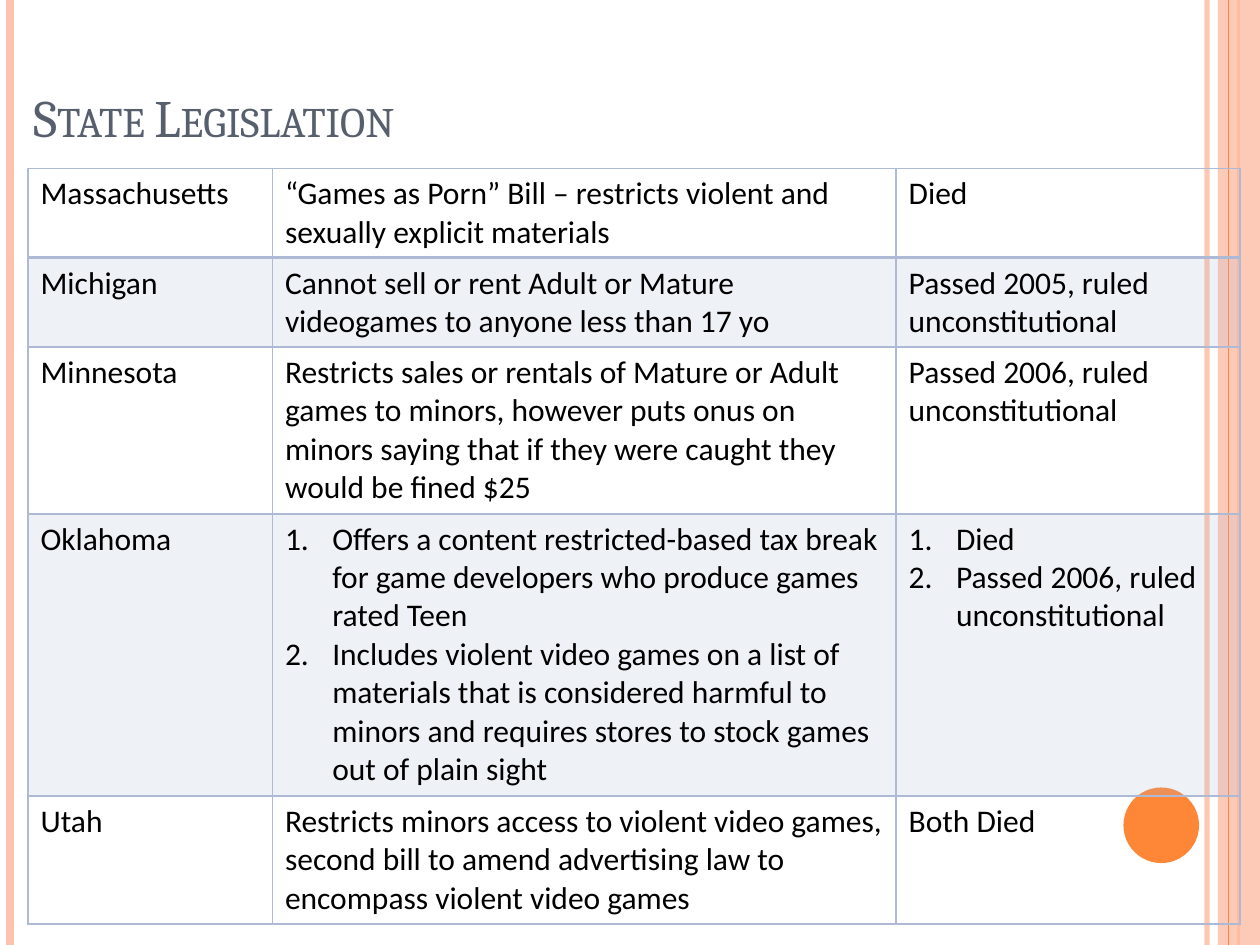
from lxml import etree
from pptx import Presentation
from pptx.dml.color import RGBColor
from pptx.enum.shapes import MSO_CONNECTOR, MSO_SHAPE
from pptx.enum.text import MSO_ANCHOR
from pptx.oxml.ns import qn
from pptx.util import Pt

STRAIGHT = MSO_CONNECTOR.STRAIGHT
RECTANGLE = MSO_SHAPE.RECTANGLE
OVAL = MSO_SHAPE.OVAL
BOTTOM = MSO_ANCHOR.BOTTOM

ORANGE = RGBColor(0xFE, 0x86, 0x37)
PEACH = RGBColor(0xFE, 0xC3, 0xAE)
SLATE = RGBColor(0x57, 0x5F, 0x6D)
BLUE = RGBColor(0xAE, 0xBA, 0xD5)
BLACK = RGBColor(0, 0, 0)

WIDTH, HEIGHT = 720, 540
TITLE_FORMAT = {"name": "Cambria", "size": Pt(30), "bold": False}
CELL_FORMAT = {"name": "Calibri", "size": Pt(18), "bold": False}
LIST_INDENT = Pt(27)

STRIPES = [(689.8, PEACH, 3, 93), (5.9, PEACH, 4.5, 100), (707.8, ORANGE, 1.5, 100)]
COLUMN_WIDTHS = [139.7, 356.4, 196.5]
ROW_HEIGHTS = [51.2, 51, 95.2, 161.2, 73.2]
LEGISLATION = [
    ("Massachusetts",
     "“Games as Porn” Bill – restricts violent and sexually explicit materials",
     "Died"),
    ("Michigan",
     "Cannot sell or rent Adult or Mature videogames to anyone less than 17 yo",
     "Passed 2005, ruled unconstitutional"),
    ("Minnesota",
     "Restricts sales or rentals of Mature or Adult games to minors, however puts "
     "onus on minors saying that if they were caught they would be fined $25",
     "Passed 2006, ruled unconstitutional"),
    ("Oklahoma",
     ["Offers a content restricted-based tax break for game developers who produce "
      "games rated Teen",
      "Includes violent video games on a list of materials that is considered harmful "
      "to minors and requires stores to stock games out of plain sight"],
     ["Died", "Passed 2006, ruled unconstitutional"]),
    ("Utah",
     "Restricts minors access to violent video games, second bill to amend "
     "advertising law to encompass violent video games",
     "Both Died"),
]


def set_opacity(element, percent):
    for color in element.iter(qn("a:srgbClr")):
        etree.SubElement(color, qn("a:alpha"), val=str(percent * 1000))


class SlideBuilder:
    def __init__(self, slide):
        self.slide = slide
        self.shapes = slide.shapes

    def add_text(self, paragraph, text, color, formats):
        run = paragraph.add_run()
        run.text = text
        for name, value in formats.items():
            setattr(run.font, name, value)
        run.font.color.rgb = color
        return run

    def stripe(self, x, color, width, opacity=100):
        connector = self.shapes.add_connector(STRAIGHT, Pt(x), 0, Pt(x), Pt(HEIGHT))
        connector.line.color.rgb = color
        connector.line.width = Pt(width)
        properties = connector._element.spPr
        if opacity < 100:
            set_opacity(properties, opacity)
        etree.SubElement(properties, qn("a:effectLst"))

    def shape(self, kind, left, top, width, height, color, opacity=100):
        shape = self.shapes.add_shape(kind, Pt(left), Pt(top), Pt(width), Pt(height))
        shape.shadow.inherit = False
        shape.fill.solid()
        shape.fill.fore_color.rgb = color
        shape.line.fill.background()
        if opacity < 100:
            set_opacity(shape._element.spPr, opacity)

    def title(self, text, left, top, width, height):
        box = self.shapes.add_textbox(Pt(left), Pt(top), Pt(width), Pt(height))
        frame = box.text_frame
        frame.word_wrap = True
        frame.vertical_anchor = BOTTOM
        run = self.add_text(frame.paragraphs[0], text, SLATE, TITLE_FORMAT)
        run._r.get_or_add_rPr().set("cap", "small")

    def number(self, paragraph):
        properties = paragraph._p.get_or_add_pPr()
        properties.set("marL", str(LIST_INDENT))
        properties.set("indent", str(-LIST_INDENT))
        etree.SubElement(properties, qn("a:buFont"), typeface="+mj-lt")
        etree.SubElement(properties, qn("a:buAutoNum"), type="arabicPeriod")

    def borders(self, cell, widths):
        properties = cell._tc.get_or_add_tcPr()
        for index, (side, width) in enumerate(widths.items()):
            line = etree.Element(qn(f"a:ln{side}"), w=str(Pt(width)))
            fill = etree.SubElement(line, qn("a:solidFill"))
            etree.SubElement(fill, qn("a:srgbClr"), val=str(BLUE))
            properties.insert(index, line)

    def cell(self, cell, content, shaded, widths):
        if shaded:
            cell.fill.solid()
            cell.fill.fore_color.rgb = BLUE
            set_opacity(cell._tc.tcPr, 20)
        else:
            cell.fill.background()
        self.borders(cell, widths)
        numbered = isinstance(content, list)
        frame = cell.text_frame
        for index, text in enumerate(content if numbered else [content]):
            paragraph = frame.add_paragraph() if index else frame.paragraphs[0]
            self.add_text(paragraph, text, BLACK, CELL_FORMAT)
            if numbered:
                self.number(paragraph)

    def table(self, left, top, rows, column_widths, row_heights):
        table = self.shapes.add_table(
            len(rows), len(column_widths), Pt(left), Pt(top),
            Pt(sum(column_widths)), Pt(sum(row_heights))).table
        table.first_row = False
        table.horz_banding = False
        for column, width in zip(table.columns, column_widths):
            column.width = Pt(width)
        for row, height in zip(table.rows, row_heights):
            row.height = Pt(height)
        for r, contents in enumerate(rows):
            widths = {"L": 1, "R": 1, "T": 2 if r == 1 else 1, "B": 2 if r == 0 else 1}
            for c, content in enumerate(contents):
                self.cell(table.cell(r, c), content, r % 2 == 1, widths)


def main():
    presentation = Presentation()
    presentation.slide_width = Pt(WIDTH)
    presentation.slide_height = Pt(HEIGHT)
    builder = SlideBuilder(presentation.slides.add_slide(presentation.slide_layouts[6]))
    for stripe in STRIPES:
        builder.stripe(*stripe)
    builder.shape(RECTANGLE, 696, 0, 24, HEIGHT, PEACH, 87)
    builder.stripe(702, ORANGE, 0.75)
    builder.shape(OVAL, 642, 450, 43.2, 43.2, ORANGE)
    builder.title("State Legislation", 12, -2, 588, 90)
    builder.table(16, 96.2, LEGISLATION, COLUMN_WIDTHS, ROW_HEIGHTS)
    presentation.save("out.pptx")


if __name__ == "__main__":
    main()
